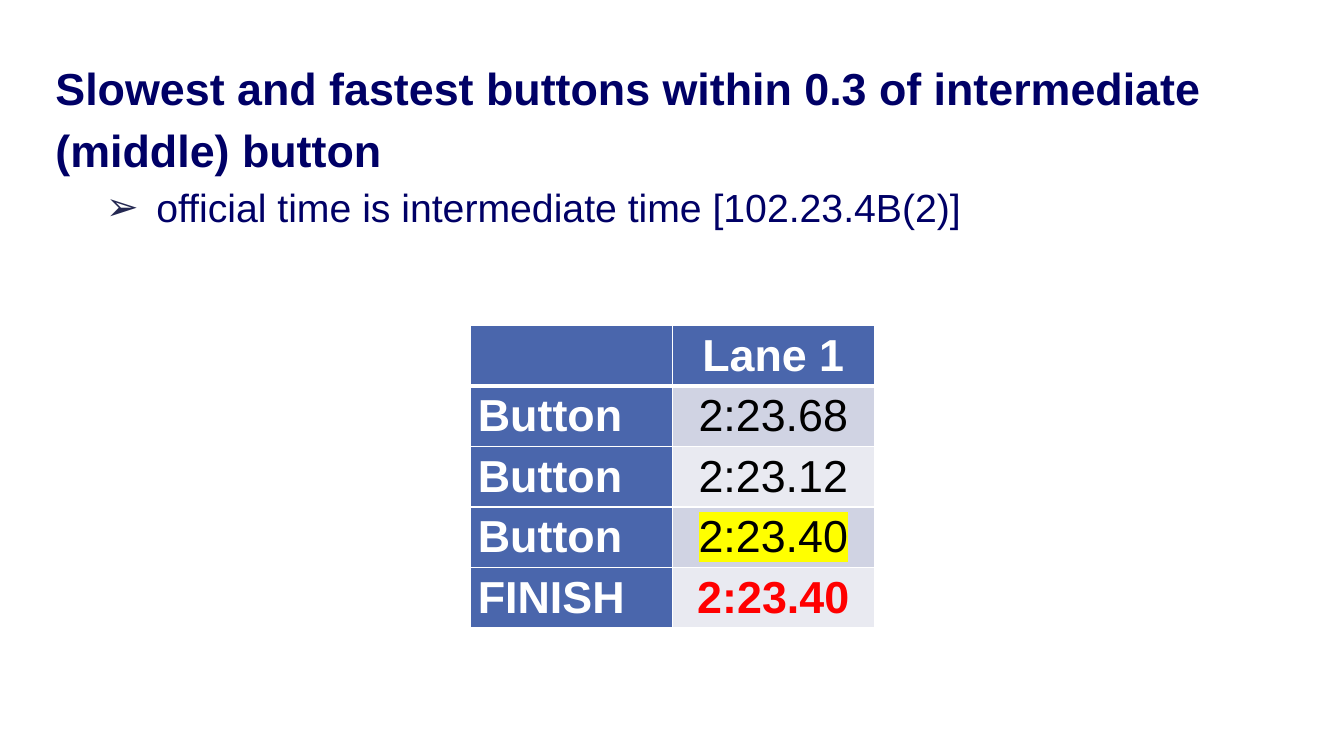
from pptx import Presentation
from pptx.dml.color import RGBColor
from pptx.enum import text as t
from pptx.oxml import parse_xml
from pptx.oxml.ns import nsdecls
from pptx.util import Inches, Pt

NAVY = RGBColor(0x00, 0x00, 0x66)
BLUE = RGBColor(0x4A, 0x66, 0xAC)
WHITE = RGBColor(0xFF, 0xFF, 0xFF)
BLACK = RGBColor(0x00, 0x00, 0x00)
RED = RGBColor(0xFF, 0x00, 0x00)
BANDS = [RGBColor(0xE9, 0xEA, 0xF1), RGBColor(0xD0, 0xD3, 0xE3)]
SLATE, YELLOW = "242852", "FFFF00"

RULE = "Slowest and fastest buttons within 0.3 of intermediate (middle) button"
TIME = "official time is intermediate time [102.23.4B(2)]"
ROWS = [
    ("", "Lane 1"),
    ("Button", "2:23.68"),
    ("Button", "2:23.12"),
    ("Button", "2:23.40"),
    ("FINISH", "2:23.40"),
]
MIDDLE, FINISH = 3, 4  # rows of the intermediate and the official time


def xml(body):
    tag, rest = body.split(" ", 1)
    return parse_xml(f"<a:{tag} {nsdecls('a')} {rest}")


def add_run(para, words, size, color, bold):
    run = para.add_run()
    run.text = words
    font = run.font
    font.name, font.size, font.bold = "Arial", Pt(size), bold
    font.color.rgb = color
    return run


def add_edges(cell, row):
    """Rule the cell in white, with a heavy line under the header row."""
    heavy = {"T": row == 1, "B": row == 0}
    for spot, side in enumerate("LRTB"):
        width = Pt(3 if heavy.get(side) else 1)
        edge = xml(f'ln{side} w="{width}"><a:solidFill><a:srgbClr val="{WHITE}"/>'
                   f'</a:solidFill></a:ln{side}>')
        cell._tc.get_or_add_tcPr().insert(spot, edge)


def add_rule(slide):
    body = slide.placeholders[1]
    body.left, body.top = Inches(0.45), Inches(0.42)
    body.width, body.height = Inches(12.42), Inches(2.56)
    frame = body.text_frame
    frame.auto_size = t.MSO_AUTO_SIZE.NONE
    frame.vertical_anchor = t.MSO_ANCHOR.TOP
    frame.margin_left = frame.margin_right = Inches(0.1)
    frame.margin_top = frame.margin_bottom = Inches(0.1)
    head, point = frame.paragraphs[0], frame.add_paragraph()
    point.level = 1
    for para in (head, point):
        para.line_spacing = 1.15
        para.space_before = Pt(0)
    add_run(head, RULE, 32, NAVY, True)
    add_run(point, TIME, 28, NAVY, False)

    props = head._p.get_or_add_pPr()
    props.set("marL", "0")
    props.set("indent", "0")
    props.append(xml("buNone />"))
    props = point._p.get_or_add_pPr()
    props.set("marL", str(Inches(1)))
    props.set("indent", str(Inches(-0.5)))
    props.append(xml(f'buClr ><a:srgbClr val="{SLATE}"/></a:buClr>'))
    props.append(xml('buFont typeface="Arial"/>'))
    props.append(xml('buChar char="➢"/>'))


def add_times(slide):
    wide, high = Inches(2), Inches(0.6)
    table = slide.shapes.add_table(len(ROWS), 2, Inches(4.67), Inches(3.23),
                                   wide * 2, high * len(ROWS)).table
    table.first_col = True
    for row, line in enumerate(ROWS):
        for col, words in enumerate(line):
            cell = table.cell(row, col)
            label = row == 0 or col == 0
            cell.fill.solid()
            cell.fill.fore_color.rgb = BLUE if label else BANDS[row % 2]
            add_edges(cell, row)
            cell.vertical_anchor = t.MSO_ANCHOR.MIDDLE
            cell.margin_left = cell.margin_right = Inches(0.07)
            cell.margin_top = cell.margin_bottom = 0
            if not words:
                continue
            para = cell.text_frame.paragraphs[0]
            para.alignment = t.PP_ALIGN.CENTER if col else t.PP_ALIGN.LEFT
            color = WHITE if label else RED if row == FINISH else BLACK
            run = add_run(para, words, 32, color, label or row == FINISH)
            if row == MIDDLE and col == 1:
                fill = run._r.rPr.find("{*}solidFill")
                fill.addnext(xml(f'highlight ><a:srgbClr val="{YELLOW}"/></a:highlight>'))


def main():
    deck = Presentation()
    deck.slide_width, deck.slide_height = Inches(13.33), Inches(7.5)
    slide = deck.slides.add_slide(deck.slide_layouts[1])
    title = slide.shapes.title.element
    title.getparent().remove(title)
    add_rule(slide)
    add_times(slide)
    deck.save("out.pptx")


if __name__ == "__main__":
    main()
